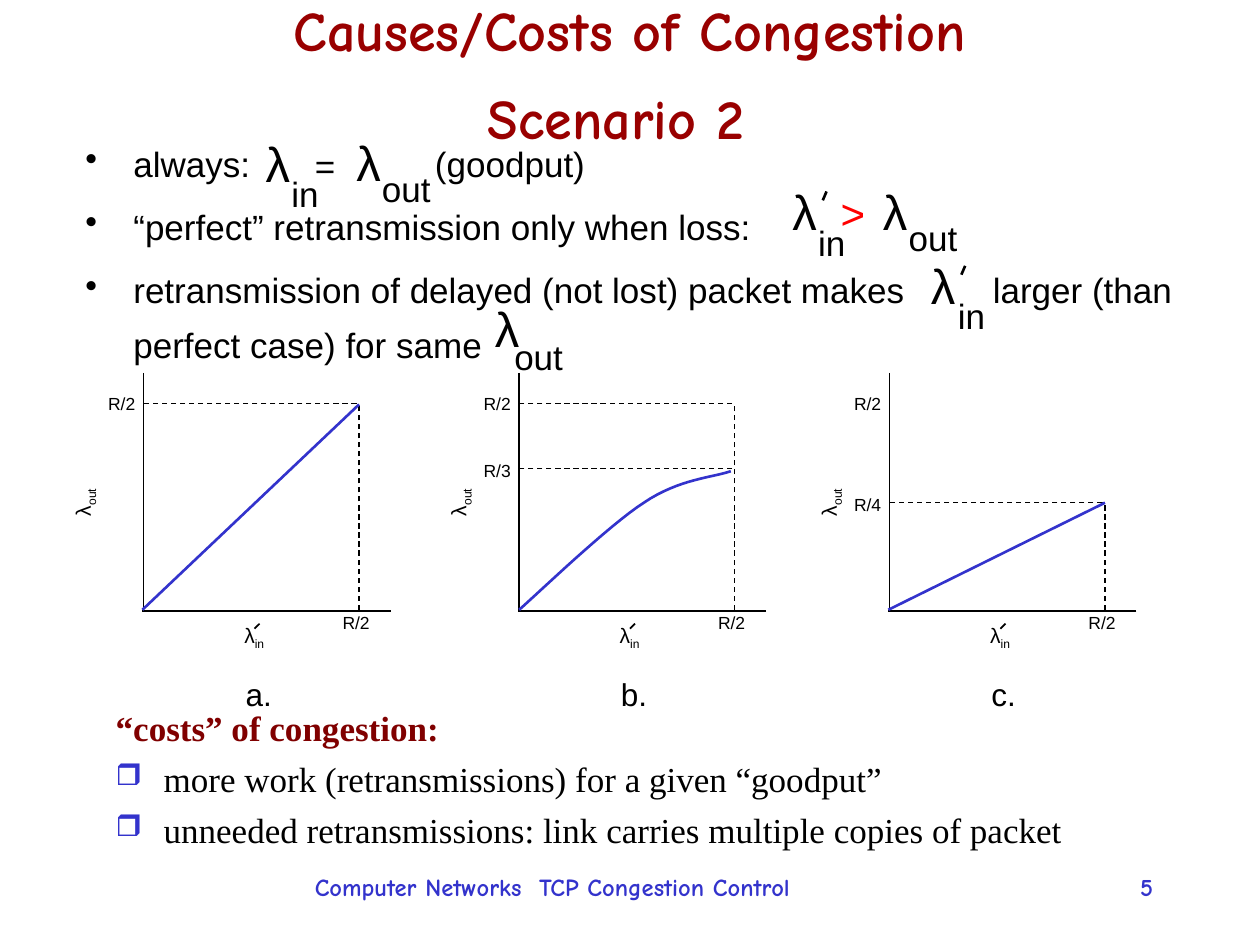
from lxml.etree import SubElement
from pptx import Presentation
from pptx.dml.color import RGBColor
from pptx.enum.dml import MSO_LINE
from pptx.enum.shapes import MSO_CONNECTOR
from pptx.enum.text import MSO_ANCHOR, MSO_AUTO_SIZE, PP_ALIGN
from pptx.oxml.ns import qn
from pptx.util import Inches, Pt


class Theme:
    black, blue, red = "000000", "3333CC", "FF0000"
    title_red, heading_red = "990000", "800000"
    sans, comic, serif = "Arial", "Comic Neue", "Times New Roman"
    title, title_gap, symbol, operator, body = 32, 44, 28, 24, 20
    caption, footer, axis, tick = 18, 14, 12, 10
    thin, stroke, bold_line = 0.75, 1, 1.5
    paragraph_gap = 5


# A run is plain text or (text, format); tracking widens one space to leave room for a symbol.
TITLE = ["Causes/Costs of Congestion", "\n", "Scenario 2", (" ", {"size": Theme.title_gap})]
POINTS = [
    (["always:", (" ", {"tracking": 100}), "(goodput)"], {}),
    (["“perfect” retransmission only when loss:"], {"line_spacing": 1.3}),
    (["retransmission of delayed (not lost) packet makes", (" ", {"tracking": 44.5}),
      "larger (than perfect case) for same"], {"line_spacing": 1.3}),
]
COSTS_HEADING = "“costs” of congestion:"
COSTS = [
    "more work (retransmissions) for a given “goodput”",
    "unneeded retransmissions: link carries multiple copies of packet",
]
# text, left, top
LAMBDAS = [(2, 1.01), (2.72, 1), (6.18, 1.39), (6.9, 1.39), (7.28, 1.98), (3.82, 2.32)]
SUBSCRIPTS = [("in", 2.21, 1.32), ("out", 2.93, 1.28), ("in", 6.39, 1.71),
              ("out", 7.11, 1.67), ("in", 7.5, 2.29), ("out", 3.98, 2.61)]
SUBSCRIPT_WIDTHS = {"in": 0.42, "out": 0.59}
PRIMES = [(6.53, 1.59), (7.63, 2.18)]

BASE = 4.84
# Horizontal positions inside a panel count from its origin.
PANELS = [
    {"name": "a.", "origin": 1.13, "ticks": [("R/2", 3.07)], "levels": [3.2],
     "drop_top": 3.22, "line_end": (1.72, 3.21)},
    {"name": "b.", "origin": 4.11, "ticks": [("R/2", 3.07), ("R/3", 3.6)],
     "levels": [3.2, 3.72], "drop_top": 3.22,
     "curve": [[(0.01, BASE), (0.17, 4.7), (0.72, 4.17), (1, 3.99)],
               [(1, 3.99), (1.28, 3.8), (1.55, 3.79), (1.69, 3.74)]]},
    {"name": "c.", "origin": 7.05, "ticks": [("R/2", 3.07), ("R/4", 3.87)],
     "levels": [3.99], "drop_top": 4, "line_end": (1.72, 3.99)},
]


def style_run(run, size, font, color, bold=False, tracking=None, baseline=None):
    run.font.size = Pt(size)
    run.font.name = font
    run.font.bold = bold
    run.font.color.rgb = RGBColor.from_string(color)
    properties = run._r.get_or_add_rPr()
    if tracking:
        properties.set("spc", str(round(tracking * 100)))
    if baseline:
        properties.set("baseline", str(baseline * 1000))


def add_bullet(paragraph, character, color=None, percent=None):
    properties = paragraph._p.get_or_add_pPr()
    if color:
        SubElement(SubElement(properties, qn("a:buClr")), qn("a:srgbClr"), val=color)
    if percent:
        SubElement(properties, qn("a:buSzPct"), val=str(percent * 1000))
    SubElement(properties, qn("a:buChar"), char=character)


def write(paragraph, runs, align=None, bullet=None, hanging=None, space_before=None,
          line_spacing=None, size=Theme.body, font=Theme.sans, color=Theme.black, bold=False):
    if bullet:
        add_bullet(paragraph, **bullet)
    if hanging:
        properties = paragraph._p.get_or_add_pPr()
        properties.set("marL", str(Inches(hanging)))
        properties.set("indent", str(-Inches(hanging)))
    if align is not None:
        paragraph.alignment = align
    if space_before:
        paragraph.space_before = Pt(space_before)
    if line_spacing:
        paragraph.line_spacing = line_spacing
    for item in [runs] if isinstance(runs, str) else runs:
        text, extra = (item, {}) if isinstance(item, str) else item
        if text == "\n":
            paragraph.add_line_break()
            SubElement(paragraph._p[-1], qn("a:rPr"), sz=str(Theme.title_gap * 100))
            continue
        run = paragraph.add_run()
        run.text = text
        style_run(run, **{"size": size, "font": font, "color": color, "bold": bold, **extra})


def add_text(slide, box, paragraphs, wrap=True, anchor=MSO_ANCHOR.TOP, rotation=0, **style):
    """Add a text box; each paragraph is its runs, or (runs, format) as a tuple."""
    shape = slide.shapes.add_textbox(*map(Inches, box))
    shape.rotation = rotation
    frame = shape.text_frame
    frame.word_wrap = wrap
    frame.vertical_anchor = anchor
    if not wrap:
        frame.auto_size = MSO_AUTO_SIZE.SHAPE_TO_FIT_TEXT
    for index, item in enumerate(paragraphs):
        runs, extra = item if isinstance(item, tuple) else (item, {})
        paragraph = frame.add_paragraph() if index else frame.paragraphs[0]
        gap = Theme.paragraph_gap if index else None
        write(paragraph, runs, **{"space_before": gap, **style, **extra})


def add_line(slide, start, end, color=Theme.black, width=Theme.thin, dashed=False):
    line = slide.shapes.add_connector(MSO_CONNECTOR.STRAIGHT, *map(Inches, (*start, *end)))
    line.line.color.rgb = RGBColor.from_string(color)
    line.line.width = Pt(width)
    if dashed:
        line.line.dash_style = MSO_LINE.DASH
    SubElement(line._element.spPr, qn("a:effectLst"))


def bezier_point(controls, t):
    weights = ((1 - t) ** 3, 3 * t * (1 - t) ** 2, 3 * t * t * (1 - t), t ** 3)
    return tuple(sum(w * point[axis] for w, point in zip(weights, controls)) for axis in (0, 1))


def add_curve(slide, origin, segments, steps=16):
    points = [bezier_point(segment, step / steps) for segment in segments
              for step in range(steps + 1)]
    points = [(Inches(origin + x), Inches(y)) for x, y in points]
    builder = slide.shapes.build_freeform(*points[0])
    builder.add_line_segments(points[1:], close=False)
    curve = builder.convert_to_shape()
    curve.shadow.inherit = False
    curve.fill.background()
    curve.line.color.rgb = RGBColor.from_string(Theme.blue)
    curve.line.width = Pt(Theme.bold_line)


def add_panel(slide, panel):
    x = panel["origin"]
    add_line(slide, (x + 0.01, 2.96), (x + 0.01, BASE))
    add_line(slide, (x + 1.97, 4.85), (x, 4.85))
    for level in panel["levels"]:
        add_line(slide, (x + 1.7, level), (x, level), dashed=True)
    add_line(slide, (x + 1.72, BASE), (x + 1.72, panel["drop_top"]), dashed=True)
    if "curve" in panel:
        add_curve(slide, x, panel["curve"])
    else:
        dx, y = panel["line_end"]
        add_line(slide, (x, BASE), (x + dx, y), color=Theme.blue, width=Theme.bold_line)

    ticks = [(text, -0.37, top) for text, top in panel["ticks"]] + [("R/2", 1.49, 4.81)]
    for text, dx, top in ticks:
        add_text(slide, (x + dx, top, 0.42, 0.27), [text], wrap=False, size=Theme.tick)
    add_text(slide, (x + 0.71, 4.89, 0.38, 0.3), [["λ", ("in", {"baseline": -25})]],
             wrap=False, size=Theme.axis)
    add_line(slide, (x + 0.89, 4.99), (x + 0.93, 4.95), width=Theme.stroke)
    add_text(slide, (x - 0.7, 3.82, 0.45, 0.3), [["λ", ("out", {"baseline": -25})]],
             rotation=270, size=Theme.axis)
    add_text(slide, (x + 0.72, 5.31, 0.41, 0.4), [panel["name"]], wrap=False,
             size=Theme.caption)


def main():
    presentation = Presentation()
    presentation.slide_width, presentation.slide_height = Inches(10), Inches(7.5)
    slide = presentation.slides.add_slide(presentation.slide_layouts[6])

    add_text(slide, (0.75, -0.03, 8.5, 1.25), [TITLE], anchor=MSO_ANCHOR.MIDDLE,
             align=PP_ALIGN.CENTER, size=Theme.title, font=Theme.comic,
             color=Theme.title_red, bold=True)
    add_text(slide, (0.58, 1.08, 9.11, 2.1), POINTS, hanging=0.38, bullet={"character": "•"})

    symbol = {"wrap": False, "align": PP_ALIGN.CENTER}
    for left, top in LAMBDAS:
        add_text(slide, (left, top, 0.41, 0.57), ["λ"], size=Theme.symbol, **symbol)
    for text, left, top in SUBSCRIPTS:
        add_text(slide, (left, top, SUBSCRIPT_WIDTHS[text], 0.43), [text], **symbol)
    add_text(slide, (2.4, 1.1, 0.36, 0.43), ["="], **symbol)
    add_text(slide, (6.57, 1.44, 0.4, 0.5), [">"], size=Theme.operator, color=Theme.red, **symbol)
    for left, bottom in PRIMES:
        add_line(slide, (left, bottom), (left + 0.03, bottom - 0.07), width=Theme.bold_line)

    for panel in PANELS:
        add_panel(slide, panel)

    box_bullet = {"character": "❒", "color": Theme.blue, "percent": 85}
    heading = (COSTS_HEADING, {"color": Theme.heading_red, "bold": True})
    add_text(slide, (0.82, 5.56, 8.91, 1.08),
             [heading] + [(cost, {"bullet": box_bullet}) for cost in COSTS],
             hanging=0.38, font=Theme.serif)

    footer = {"size": Theme.footer, "font": Theme.comic, "color": Theme.blue, "bold": True}
    add_text(slide, (2.4, 6.87, 5.43, 0.42), ["Computer Networks  TCP Congestion Control"], **footer)
    add_text(slide, (7.75, 6.87, 1.5, 0.5), ["5"], align=PP_ALIGN.RIGHT, **footer)
    presentation.save("out.pptx")


if __name__ == "__main__":
    main()
